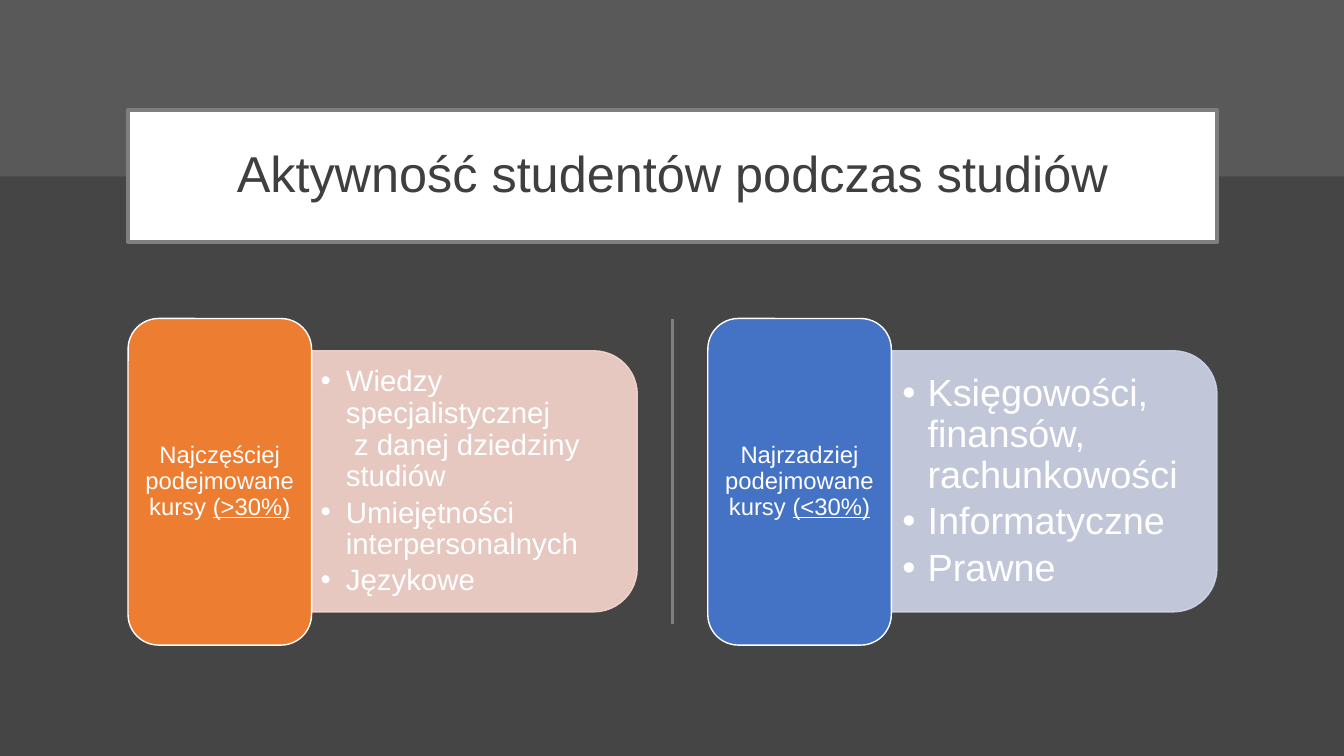
from dataclasses import dataclass

from lxml.etree import SubElement
from pptx import Presentation
from pptx.dml.color import RGBColor
from pptx.enum.shapes import MSO_CONNECTOR, MSO_SHAPE
from pptx.enum.text import MSO_ANCHOR, MSO_AUTO_SIZE, PP_ALIGN
from pptx.oxml.ns import qn
from pptx.util import Inches, Pt


@dataclass(frozen=True)
class Theme:
    font: str = "Arial"
    background: str = "454545"
    band: str = "595959"
    white: str = "FFFFFF"
    title_text: str = "3F3F3F"
    rule: str = "7F7F7F"
    title_size: int = 36
    label_size: int = 17


theme = Theme()

topics = [
    {
        "left": 1.27, "accent": "ED7D31", "tint": "F8D7CE",
        "label": "Najczęściej podejmowane kursy ", "share": "(>30%)",
        "size": 21, "insets": (0.09, 0.04),
        "items": ["Wiedzy specjalistycznej\v z danej dziedziny studiów",
                  "Umiejętności interpersonalnych", "Językowe"],
    },
    {
        "left": 7.02, "accent": "4472C4", "tint": "CFD5EA",
        "label": "Najrzadziej podejmowane kursy ", "share": "(<30%)",
        "size": 27, "insets": (0.11, 0.06),
        "items": ["Księgowości, finansów, rachunkowości",
                  "Informatyczne", "Prawne"],
    },
]


def paint(shape, fill, line=None, width=1, opacity=None):
    """Give a shape its solid fill and outline, without a shadow."""
    if not shape.is_placeholder:
        shape.shadow.inherit = False
    shape.fill.solid()
    shape.fill.fore_color.rgb = RGBColor.from_string(fill)
    if line is None:
        shape.line.fill.background()
    else:
        shape.line.color.rgb = RGBColor.from_string(line)
        shape.line.width = Pt(width)
    if opacity:
        for color in shape._element.spPr.iter(qn("a:srgbClr")):
            SubElement(color, qn("a:alpha"), val=str(opacity * 1000))


def write(shape, paragraphs, size, color, align, insets, after=0):
    """Write paragraphs of (text, underlined) spans into a shape."""
    frame = shape.text_frame
    side, edge = (Inches(inset) for inset in insets)
    frame_format = {
        "word_wrap": True, "auto_size": MSO_AUTO_SIZE.NONE,
        "vertical_anchor": MSO_ANCHOR.MIDDLE,
        "margin_left": side, "margin_right": side,
        "margin_top": edge, "margin_bottom": edge,
    }
    for name, value in frame_format.items():
        setattr(frame, name, value)
    para_format = {"alignment": align, "line_spacing": 0.9,
                   "space_before": Pt(0), "space_after": Pt(after)}
    for index, spans in enumerate(paragraphs):
        para = frame.add_paragraph() if index else frame.paragraphs[0]
        for name, value in para_format.items():
            setattr(para, name, value)
        for text, underlined in spans:
            for row, piece in enumerate(text.split("\v")):
                if row:
                    para.add_line_break()
                span = para.add_run()
                span.text = piece
                span_format = {"name": theme.font, "size": Pt(size),
                               "underline": underlined}
                for name, value in span_format.items():
                    setattr(span.font, name, value)
                span.font.color.rgb = RGBColor.from_string(color)


# Page and background
deck = Presentation()
deck.slide_width, deck.slide_height = Inches(13.33), Inches(7.5)
page = deck.slides.add_slide(deck.slide_layouts[3])
page.background.fill.solid()
page.background.fill.fore_color.rgb = RGBColor.from_string(theme.background)
shapes = page.shapes
title, *lists = page.placeholders
tree = shapes._spTree

band = shapes.add_shape(MSO_SHAPE.RECTANGLE, 0, 0, deck.slide_width, Inches(1.75))
paint(band, theme.band)

# Title
title.left, title.top = Inches(1.27), Inches(1.09)
title.width, title.height = Inches(10.8), Inches(1.31)
paint(title, theme.white, theme.rule, 3)
write(title, [[("Aktywność studentów podczas studiów", None)]],
      theme.title_size, theme.title_text, PP_ALIGN.CENTER, (0.1, 0.05))
tree.append(title._element)

# Divider between the two topics
divider = shapes.add_connector(MSO_CONNECTOR.STRAIGHT, Inches(6.67), Inches(3.16),
                               Inches(6.67), Inches(6.19))
divider.line.color.rgb = RGBColor.from_string(theme.rule)
divider.line.width = Pt(1.5)
SubElement(divider._element.spPr, qn("a:effectLst"))

# Topics: tinted panel with a list, and a label card on its left
for topic, courses in zip(topics, lists):
    left = topic["left"]
    panel = shapes.add_shape(MSO_SHAPE.ROUND_2_SAME_RECTANGLE, Inches(left + 2.14),
                             Inches(3.16), Inches(2.59), Inches(3.23))
    panel.rotation = 90
    paint(panel, topic["tint"], topic["tint"], opacity=90)

    courses.left, courses.top = Inches(left + 1.82), Inches(3.61)
    courses.width, courses.height = Inches(3.1), Inches(2.34)
    write(courses, [[(item, None)] for item in topic["items"]], topic["size"],
          theme.white, PP_ALIGN.LEFT, topic["insets"], after=0.15 * topic["size"])
    for para in courses.text_frame.paragraphs:
        props = para._p.get_or_add_pPr()
        props.set("marL", str(Inches(0.25)))
        props.set("indent", str(-Inches(0.25)))
        SubElement(props, qn("a:buFont"), typeface=theme.font)
        SubElement(props, qn("a:buChar"), char="•")
    tree.append(courses._element)

    card = shapes.add_shape(MSO_SHAPE.ROUNDED_RECTANGLE, Inches(left), Inches(3.16),
                            Inches(1.82), Inches(3.24))
    paint(card, topic["accent"], theme.white)
    label = shapes.add_textbox(Inches(left + 0.09), Inches(3.25),
                               Inches(1.64), Inches(3.06))
    write(label, [[(topic["label"], None), (topic["share"], True)]],
          theme.label_size, theme.white, PP_ALIGN.CENTER, (0.07, 0.04),
          after=0.35 * theme.label_size)

deck.save("out.pptx")
